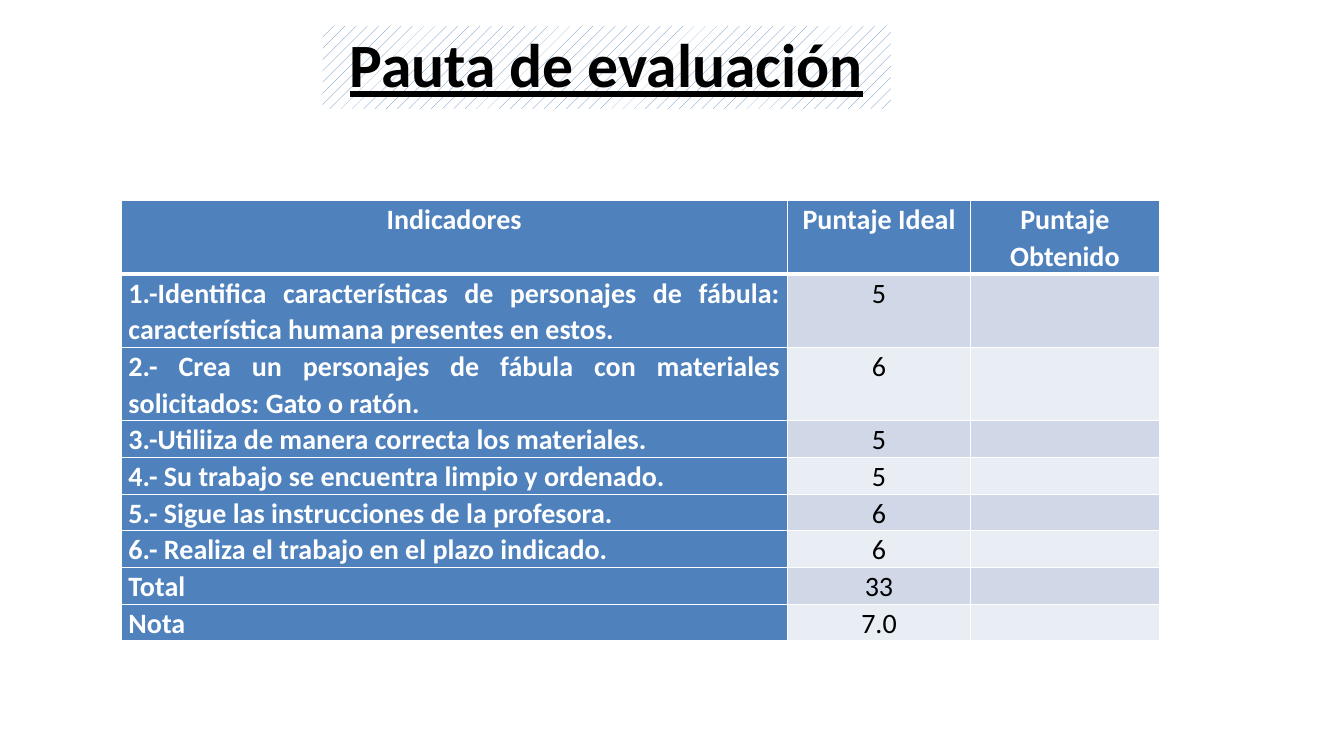
from dataclasses import dataclass

import pptx
import pptx.dml.color
import pptx.enum.dml
import pptx.enum.shapes
import pptx.enum.text
import pptx.oxml
import pptx.oxml.ns
import pptx.util

Pt = pptx.util.Pt
ALIGN = pptx.enum.text.PP_ALIGN
ANCHOR = pptx.enum.text.MSO_ANCHOR

FONT = "Calibri"
COLORS = {
    "blue": "4F81BD",
    "band_dark": "D0D8E8",
    "band_light": "E9EDF4",
    "white": "FFFFFF",
    "black": "000000",
}


@dataclass
class Indicator:
    label: str
    score: str
    height: float = 25.2


INDICATORS = [
    Indicator("1.-Identifica características de personajes de fábula: "
              "característica humana presentes en estos.", "5", 52),
    Indicator("2.- Crea un personajes de fábula con materiales solicitados: "
              "Gato o ratón.", "6", 52),
    Indicator("3.-Utiliiza de manera correcta los materiales.", "5"),
    Indicator("4.- Su trabajo se encuentra limpio y ordenado.", "5"),
    Indicator("5.- Sigue las instrucciones de la profesora.", "6"),
    Indicator("6.- Realiza el trabajo en el plazo indicado.", "6"),
    Indicator("Total", "33"),
    Indicator("Nota", "7.0"),
]
HEADERS = ["Indicadores", "Puntaje Ideal", "Puntaje Obtenido"]
HEADER_HEIGHT = 52
COLUMN_WIDTHS = [476, 131, 134.6]


def rgb(name: str) -> pptx.dml.color.RGBColor:
    return pptx.dml.color.RGBColor.from_string(COLORS[name])


def add_run(p, text: str, size: float, color: str, bold: bool):
    r = p.add_run()
    r.text = text
    r.font.name = FONT
    r.font.size = Pt(size)
    r.font.bold = bold
    r.font.color.rgb = rgb(color)
    return r


def set_borders(cell, top: float, bottom: float) -> None:
    tc_pr = cell._tc.get_or_add_tcPr()
    widths = {"lnL": 1, "lnR": 1, "lnT": top, "lnB": bottom}
    for i, (tag, width) in enumerate(widths.items()):
        tc_pr.insert(i, pptx.oxml.parse_xml(
            f'<a:{tag} {pptx.oxml.ns.nsdecls("a")} w="{Pt(width)}"><a:solidFill>'
            f'<a:srgbClr val="{COLORS["white"]}"/></a:solidFill></a:{tag}>'))


def fill_cell(cell, text: str, fill: str, color: str, bold: bool, align) -> None:
    cell.fill.solid()
    cell.fill.fore_color.rgb = rgb(fill)
    cell.margin_left = cell.margin_right = Pt(5.4)
    cell.margin_top = cell.margin_bottom = Pt(0)
    if text:
        p = cell.text_frame.paragraphs[0]
        p.alignment = align
        p.line_spacing = 1.07
        p.space_after = Pt(8)
        add_run(p, text, 20, color, bold)


def add_title(s) -> None:
    sp = s.shapes.add_shape(pptx.enum.shapes.MSO_SHAPE.RECTANGLE,
                            Pt(230.4), Pt(18.7), Pt(406), Pt(59))
    sp.shadow.inherit = False
    sp.line.fill.background()
    sp.fill.patterned()
    sp.fill.pattern = pptx.enum.dml.MSO_PATTERN.PERCENT_10
    sp.fill.fore_color.rgb = rgb("blue")
    sp.fill.back_color.rgb = rgb("white")
    tf = sp.text_frame
    tf.word_wrap = True
    tf.vertical_anchor = ANCHOR.MIDDLE
    p = tf.paragraphs[0]
    p.alignment = ALIGN.CENTER
    p.line_spacing = 0.9
    add_run(p, "Pauta de evaluación", 44, "black", True).font.underline = True


def add_rubric(s) -> None:
    heights = [HEADER_HEIGHT] + [item.height for item in INDICATORS]
    table = s.shapes.add_table(len(heights), len(COLUMN_WIDTHS), Pt(86.4), Pt(143.3),
                               Pt(sum(COLUMN_WIDTHS)), Pt(sum(heights))).table
    table.horz_banding = False
    for column, width in zip(table.columns, COLUMN_WIDTHS):
        column.width = Pt(width)
    for row, height in zip(table.rows, heights):
        row.height = Pt(height)

    # Header row
    for cell, text in zip(table.rows[0].cells, HEADERS):
        fill_cell(cell, text, "blue", "white", True, ALIGN.CENTER)
        set_borders(cell, 1, 3)

    # Indicator rows, with alternating score bands
    for i, item in enumerate(INDICATORS):
        label, score, obtained = table.rows[i + 1].cells
        band = "band_light" if i % 2 else "band_dark"
        fill_cell(label, item.label, "blue", "white", True, ALIGN.JUSTIFY)
        fill_cell(score, item.score, band, "black", False, ALIGN.CENTER)
        fill_cell(obtained, "", band, "black", False, ALIGN.CENTER)
        for cell in (label, score, obtained):
            set_borders(cell, 1 if i else 3, 1)


def main() -> None:
    prs = pptx.Presentation()
    prs.slide_width, prs.slide_height = Pt(960), Pt(540)
    s = prs.slides.add_slide(prs.slide_layouts[6])
    add_title(s)
    add_rubric(s)
    prs.save("out.pptx")


if __name__ == "__main__":
    main()
